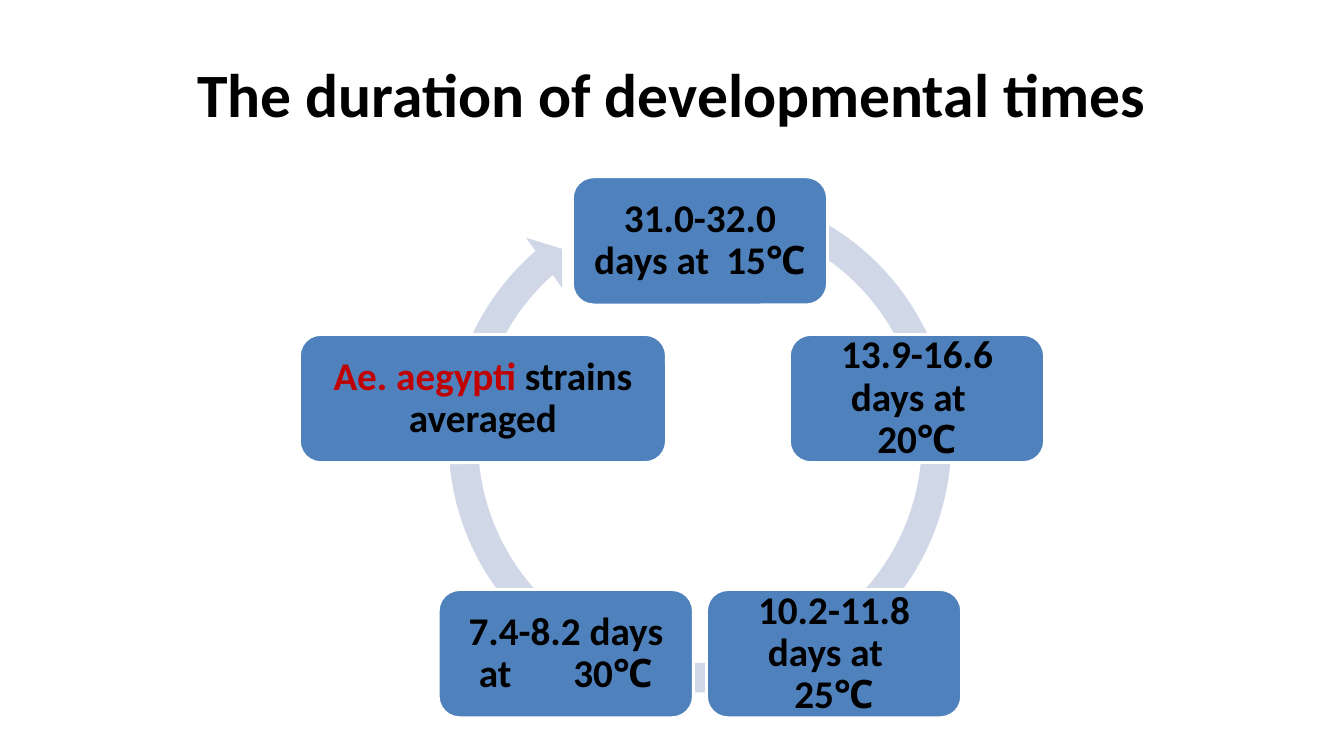
import math
from pptx import Presentation
from pptx import util as u
from pptx.dml.color import RGBColor
from pptx.enum import shapes, text

BLACK, RED, BLUE, PALE, WHITE = "000000", "C00000", "4F81BD", "D0D8E8", "FFFFFF"
TITLE = "The duration of developmental times"
STAGES = [
    (6.43, [("31.0-32.0 days at", BLACK, 0), (" ", BLACK, 6), ("15℃", BLACK, 0)]),
    (6.43, [("13.9-16.6 days at", BLACK, 0), (" ", BLACK, 6), ("\n20℃", BLACK, 0)]),
    (6.43, [("10.2-11.8 days at", BLACK, 0), (" ", BLACK, 6), ("\n25℃", BLACK, 0)]),
    (6.43, [("7.4-8.2 days at", BLACK, 0), (" ", BLACK, 38), ("30℃", BLACK, 0)]),
    (9.25, [("Ae. aegypti ", RED, 0), ("strains averaged", BLACK, 0)]),
]
CENTER_X, CENTER_Y, RADIUS = 17.64, 11.82, 5.75
BOX_H, INSET = 3.23, 0.3
ARROW_TOP, ARROW_SIZE = 4.37, 13.49
ARROW_ADJ = [0.055, 3.307, 137.294, 174.144, 0.058]


def color(value):
    return RGBColor.from_string(value)


def add_run(p, words, size, hue, spacing=0):
    if words.startswith("\n"):
        p.add_line_break()
    r = p.add_run()
    r.text = words.strip("\n")
    r.font.name, r.font.size, r.font.bold = "Calibri", u.Pt(size), True
    r.font.color.rgb = color(hue)
    if spacing:
        r._r.get_or_add_rPr().set("spc", str(spacing * 100))


def set_frame(sp, inset):
    tf = sp.text_frame
    tf.word_wrap = True
    tf.vertical_anchor = text.MSO_ANCHOR.MIDDLE
    tf.margin_left = tf.margin_right = tf.margin_top = tf.margin_bottom = u.Cm(inset)
    p = tf.paragraphs[0]
    p.alignment = text.PP_ALIGN.CENTER
    return p


def add_filled(s, kind, x, y, w, h, fill):
    sp = s.shapes.add_shape(kind, u.Cm(x), u.Cm(y), u.Cm(w), u.Cm(h))
    sp.shadow.inherit = False
    sp.fill.solid()
    sp.fill.fore_color.rgb = color(fill)
    return sp


def add_stage(s, index, width, runs):
    angle = 2 * math.pi * index / len(STAGES)
    x = CENTER_X + RADIUS * math.sin(angle) - width / 2
    y = CENTER_Y - RADIUS * math.cos(angle) - BOX_H / 2
    sp = add_filled(s, shapes.MSO_SHAPE.ROUNDED_RECTANGLE, x, y, width, BOX_H, BLUE)
    sp.line.color.rgb = color(WHITE)
    sp.line.width = u.Pt(2)
    p = set_frame(sp, INSET)
    p.line_spacing = 0.9
    for words, hue, spacing in runs:
        add_run(p, words, 28, hue, spacing)


def main():
    prs = Presentation()
    prs.slide_width, prs.slide_height = u.Cm(33.87), u.Cm(19.05)
    s = prs.slides.add_slide(prs.slide_layouts[6])
    title = s.shapes.add_textbox(u.Cm(1.69), u.Cm(0.76), u.Cm(30.48), u.Cm(3.18))
    add_run(set_frame(title, 0.2), TITLE, 44, BLACK)
    arrow = add_filled(s, shapes.MSO_SHAPE.CIRCULAR_ARROW, CENTER_X - ARROW_SIZE / 2,
                       ARROW_TOP, ARROW_SIZE, ARROW_SIZE, PALE)
    arrow.line.fill.background()
    for i, value in enumerate(ARROW_ADJ):
        arrow.adjustments[i] = value
    for i, (width, runs) in enumerate(STAGES):
        add_stage(s, i, width, runs)
    prs.save("out.pptx")


if __name__ == "__main__":
    main()
